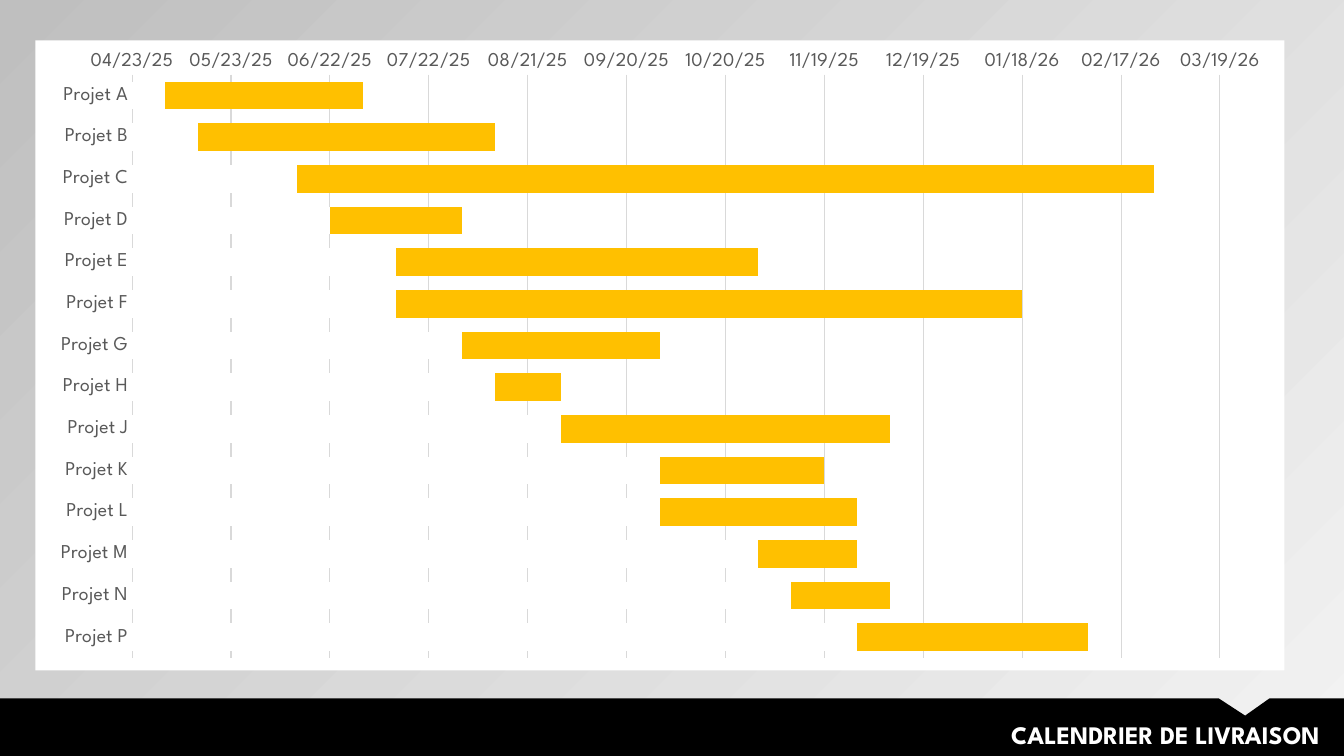
from pptx import Presentation, util as u
from pptx.chart.data import CategoryChartData
from pptx.dml.color import RGBColor
from pptx.enum import chart as ch, text
from pptx.oxml import parse_xml
from pptx.oxml.ns import nsdecls

FONT = "League Spartan"
COLORS = {
    "light": "F2F2F2",
    "shade": "BFBFBF",
    "band": "000000",
    "paper": "FFFFFF",
    "bar": "FFC000",
    "label": "595959",
    "grid": "D9D9D9",
}
SCHEDULE = {
    "A": (45780, 45840),
    "B": (45790, 45880),
    "C": (45820, 46080),
    "D": (45830, 45870),
    "E": (45850, 45960),
    "F": (45850, 46040),
    "G": (45870, 45930),
    "H": (45880, 45900),
    "J": (45900, 46000),
    "K": (45930, 45980),
    "L": (45930, 45990),
    "M": (45960, 45990),
    "N": (45970, 46000),
    "P": (45990, 46060),
}


def color(name):
    return RGBColor.from_string(COLORS[name])


def style_font(font, size, name):
    font.name = FONT
    font.size = u.Pt(size)
    font.color.rgb = color(name)


def style_line(line, name):
    line.color.rgb = color(name)
    line.width = u.Pt(0.75)


def paint_background(slide):
    fill = slide.background.fill
    fill.gradient()
    fill.gradient_angle = 135
    for stop, name, position in zip(fill.gradient_stops, ("light", "shade"), (0, 1)):
        stop.color.rgb = color(name)
        stop.position = position


def add_title_band(slide, left, top, width, height):
    notch = [(12.09, 0), (12.35, 0.17), (12.59, 0)]
    outline = notch + [(width, 0), (width, height), (0, height)]
    builder = slide.shapes.build_freeform(u.Inches(left), u.Inches(top))
    builder.add_line_segments(
        [(u.Inches(left + x), u.Inches(top + y)) for x, y in outline], close=True
    )
    band = builder.convert_to_shape()
    band.shadow.inherit = False
    band.fill.solid()
    band.fill.fore_color.rgb = color("band")
    band.line.fill.background()

    title = slide.shapes.add_textbox(
        u.Inches(left + 4.13), u.Inches(top + 0.16), u.Inches(9.06), u.Inches(0.4)
    )
    title.text_frame.word_wrap = True
    title.text_frame.auto_size = text.MSO_AUTO_SIZE.SHAPE_TO_FIT_TEXT
    title.text_frame.text = "CALENDRIER DE LIVRAISON"
    paragraph = title.text_frame.paragraphs[0]
    paragraph.alignment = text.PP_ALIGN.RIGHT
    style_font(paragraph.runs[0].font, 18, "paper")
    paragraph.runs[0].font.bold = True


def format_axes(chart):
    projects, dates = chart.category_axis, chart.value_axis
    for axis in (projects, dates):
        axis.major_tick_mark = axis.minor_tick_mark = ch.XL_TICK_MARK.NONE
        style_font(axis.tick_labels.font, 14, "label")
    projects.reverse_order = True
    projects.has_major_gridlines = False
    style_line(projects.format.line, "grid")

    dates.minimum_scale, dates.maximum_scale, dates.major_unit = 45770, 46100, 30
    dates.tick_labels.number_format = "mm/dd/yy;@"
    dates.tick_labels.number_format_is_linked = False
    dates.format.line.fill.background()
    dates.has_major_gridlines = True
    style_line(dates.major_gridlines.format.line, "grid")


def fill_chart_area(chart):
    area = parse_xml(
        f'<c:spPr {nsdecls("c", "a")}><a:solidFill><a:srgbClr val="{COLORS["paper"]}"/>'
        "</a:solidFill><a:ln><a:noFill/></a:ln></c:spPr>"
    )
    chart.element.chart.addnext(area)


def place_plot(chart, x, y, width, height):
    plot_area = chart.element.chart.plotArea
    for old in plot_area.findall("{*}layout"):
        plot_area.remove(old)
    sizes = {"x": x, "y": y, "w": width, "h": height}
    values = "".join(f'<c:{key} val="{value:.4f}"/>' for key, value in sizes.items())
    plot_area.insert(0, parse_xml(
        f'<c:layout {nsdecls("c")}><c:manualLayout><c:layoutTarget val="inner"/>'
        f'<c:xMode val="edge"/><c:yMode val="edge"/>{values}</c:manualLayout></c:layout>'
    ))


def add_gantt(slide, left, top, width, height):
    starts, ends = zip(*SCHEDULE.values())
    data = CategoryChartData()
    data.categories = [f"Projet {letter}" for letter in SCHEDULE]
    data.add_series("Series 1", ends)
    data.add_series("Series 2", starts)
    chart = slide.shapes.add_chart(
        ch.XL_CHART_TYPE.BAR_CLUSTERED,
        u.Inches(left), u.Inches(top), u.Inches(width), u.Inches(height), data,
    ).chart
    chart.has_title = False
    chart.has_legend = False
    style_font(chart.font, 14, "band")

    plot = chart.plots[0]
    plot.gap_width, plot.overlap, plot.vary_by_categories = 50, 100, False
    for series, name in zip(plot.series, ("bar", "paper")):
        series.format.fill.solid()
        series.format.fill.fore_color.rgb = color(name)
        series.invert_if_negative = False
    format_axes(chart)
    fill_chart_area(chart)
    place_plot(chart, 0.96 / width, 0.34 / height, 10.79 / width, 5.79 / height)


def main():
    deck = Presentation()
    deck.slide_width, deck.slide_height = u.Inches(13.33), u.Inches(7.5)
    slide = deck.slides.add_slide(deck.slide_layouts[6])
    paint_background(slide)
    add_title_band(slide, 0, 6.93, 13.33, 0.57)
    add_gantt(slide, 0.35, 0.4, 12.39, 6.25)
    deck.save("out.pptx")


if __name__ == "__main__":
    main()
